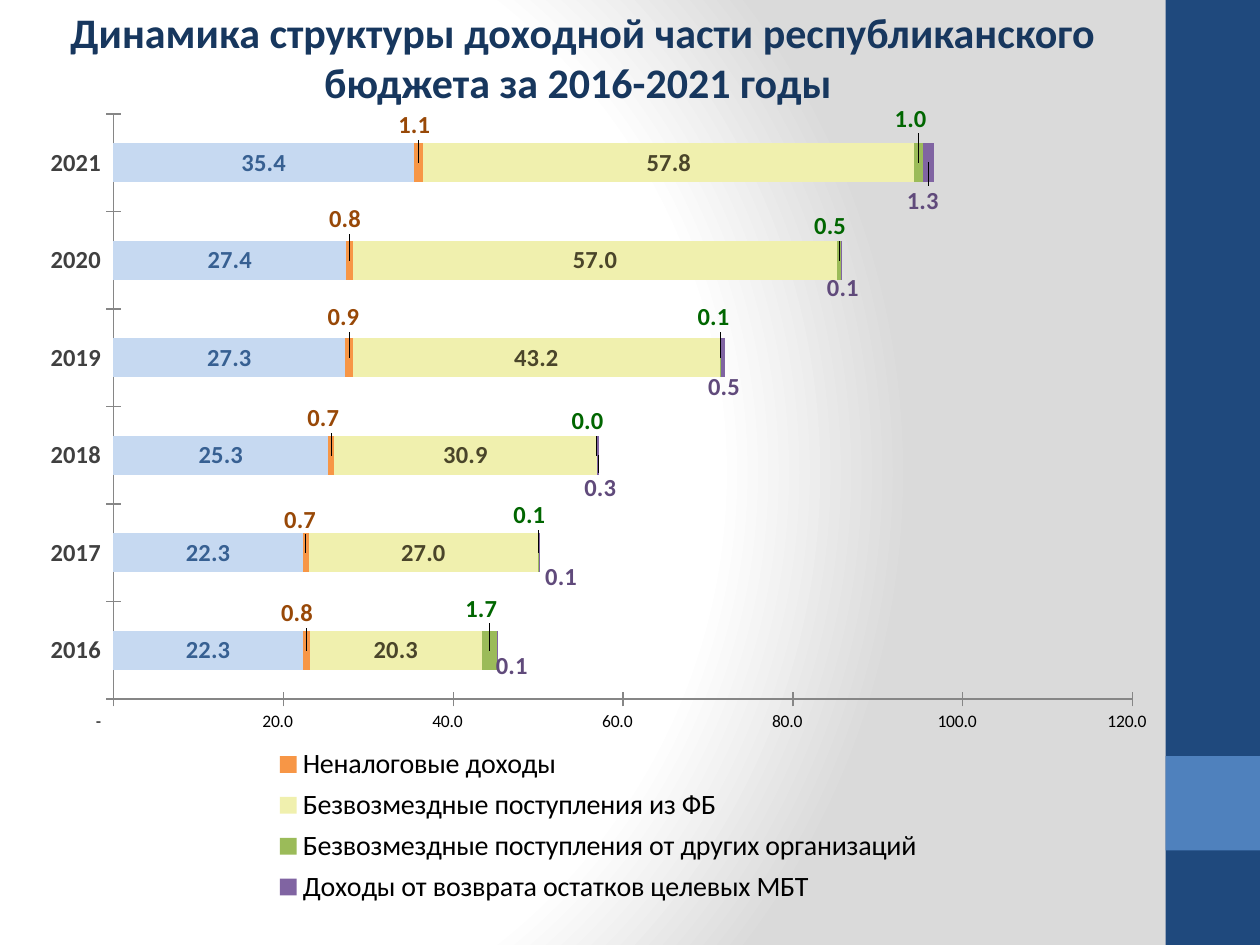
from dataclasses import dataclass

from lxml import etree
from pptx import Presentation
from pptx.chart.data import CategoryChartData
from pptx.dml.color import RGBColor
from pptx.enum.chart import XL_CHART_TYPE, XL_LEGEND_POSITION, XL_TICK_MARK
from pptx.enum.shapes import MSO_SHAPE
from pptx.enum.text import MSO_ANCHOR, MSO_AUTO_SIZE, PP_ALIGN
from pptx.oxml import parse_xml
from pptx.util import Inches, Pt

STACKED_BAR = XL_CHART_TYPE.BAR_STACKED
BOTTOM = XL_LEGEND_POSITION.BOTTOM
CROSS = XL_TICK_MARK.CROSS
NO_TICK = XL_TICK_MARK.NONE
RECTANGLE = MSO_SHAPE.RECTANGLE

C_NS = "http://schemas.openxmlformats.org/drawingml/2006/chart"
A_NS = "http://schemas.openxmlformats.org/drawingml/2006/main"
WIDTH, HEIGHT = Inches(10), Inches(7.5)
FONT = "Calibri"
COLORS = {
    "title": "17375E", "band": "1F497D", "accent": "4F81BD",
    "text": "000000", "year": "404040", "axis": "868686",
    "tax": "C6D9F1", "tax_label": "376092",
    "nontax": "F79646", "nontax_label": "984807",
    "federal": "F0F0AE", "federal_label": "4A452A",
    "other": "9BBB59", "other_label": "006600",
    "returns": "8064A2", "returns_label": "604A7B",
}
YEARS = [str(year) for year in range(2016, 2022)]


@dataclass(frozen=True)
class Box:
    """Place and size as shares of the slide."""
    left: float
    top: float
    width: float
    height: float

    def emu(self) -> tuple[int, int, int, int]:
        return (int(self.left * WIDTH), int(self.top * HEIGHT),
                int(self.width * WIDTH), int(self.height * HEIGHT))


@dataclass(frozen=True)
class Income:
    """One income source; shifts move its labels, in percent of the chart."""
    key: str
    name: str
    values: tuple[float, ...]
    shifts: tuple[tuple[float, float], ...] = ()


INCOMES = [
    Income("tax", "Налоговые доходы", (22.3, 22.3, 25.3, 27.3, 27.4, 35.4)),
    Income("nontax", "Неналоговые доходы", (0.8, 0.7, 0.7, 0.9, 0.8, 1.1),
           ((-0.8, -4.4), (-0.5, -3.9), (-0.7, -4.4),
            (-0.5, -4.8), (-0.4, -4.8), (-0.4, -4.4))),
    Income("federal", "Безвозмездные поступления из ФБ",
           (20.3, 27.0, 30.9, 43.2, 57.0, 57.8)),
    Income("other", "Безвозмездные поступления от других организаций",
           (1.7, 0.1, 0.0, 0.1, 0.5, 1.0),
           ((-0.7, -4.9), (-0.8, -4.4), (-0.8, -4.0),
            (-0.6, -4.8), (-0.8, -4.0), (-0.7, -5.2))),
    Income("returns", "Доходы от возврата остатков целевых МБТ",
           (0.1, 0.1, 0.3, 0.5, 0.1, 1.3),
           ((1.3, 1.9), (1.9, 2.9), (0.2, 3.8),
            (0.1, 3.4), (0.1, 3.3), (-0.5, 4.5))),
]


def rgb(key: str) -> RGBColor:
    return RGBColor.from_string(COLORS[key])


def style_font(font, size: float, color: str, bold: bool = False) -> None:
    font.name, font.size, font.bold = FONT, Pt(size), bold
    font.color.rgb = rgb(color)


def set_layout(parent, index: int, **settings) -> None:
    """Give a chart part a manual layout."""
    for old in parent.findall(f"{{{C_NS}}}layout"):
        parent.remove(old)
    layout = etree.Element(f"{{{C_NS}}}layout")
    manual = etree.SubElement(layout, f"{{{C_NS}}}manualLayout")
    for tag, value in settings.items():
        etree.SubElement(manual, f"{{{C_NS}}}{tag}", val=str(value))
    parent.insert(index, layout)


def paint_background(slide) -> None:
    fill = slide.background.fill
    fill.solid()
    solid = slide._element.find(f".//{{{A_NS}}}solidFill")
    stops = "".join(
        f'<a:gs pos="{share * 1000}"><a:srgbClr val="{color}"/></a:gs>'
        for share, color in ((0, "FFFFFF"), (75, "FFFFFF"), (100, "DADADA")))
    solid.getparent().replace(solid, parse_xml(
        f'<a:gradFill xmlns:a="{A_NS}" rotWithShape="1"><a:gsLst>{stops}</a:gsLst>'
        '<a:path path="circle"><a:fillToRect l="20000" t="50000" r="100000" '
        'b="50000"/></a:path></a:gradFill>'))


def add_band(slide, box: Box, color: str) -> None:
    band = slide.shapes.add_shape(RECTANGLE, *box.emu())
    band.shadow.inherit = False
    band.fill.solid()
    band.fill.fore_color.rgb = rgb(color)
    band.line.fill.background()


def set_title(slide, box: Box, text: str) -> None:
    title = slide.shapes.title
    title.left, title.top, title.width, title.height = box.emu()
    frame = title.text_frame
    frame.word_wrap = True
    frame.auto_size = MSO_AUTO_SIZE.NONE
    frame.vertical_anchor = MSO_ANCHOR.TOP
    paragraph = frame.paragraphs[0]
    paragraph.alignment = PP_ALIGN.CENTER
    run = paragraph.add_run()
    run.text = text
    style_font(run.font, 24, "title", bold=True)


def style_series(series, income: Income) -> None:
    series.format.fill.solid()
    series.format.fill.fore_color.rgb = rgb(income.key)
    series.invert_if_negative = False
    label_color = f"{income.key}_label"
    labels = series.data_labels
    labels.show_value = True
    style_font(labels.font, 14, label_color, bold=True)
    for point in range(len(income.shifts)):
        style_font(series.points[point].data_label.font, 14, label_color, bold=True)
    point_labels = series._element.iter(f"{{{C_NS}}}dLbl")
    for label, (right, down) in zip(point_labels, income.shifts):
        set_layout(label, 1, x=round(right / 100, 4), y=round(down / 100, 4))


def style_axes(chart) -> None:
    for axis in (chart.category_axis, chart.value_axis):
        axis.has_major_gridlines = False
        axis.major_tick_mark, axis.minor_tick_mark = CROSS, NO_TICK
        axis.format.line.color.rgb = rgb("axis")
    style_font(chart.category_axis.tick_labels.font, 14, "year", bold=True)
    scale = chart.value_axis
    scale.minimum_scale, scale.maximum_scale, scale.major_unit = 0, 120, 20
    style_font(scale.tick_labels.font, 10, "text")
    scale.tick_labels.number_format = (
        '_-* #,##0.0\\ _₽_-;\\-* #,##0.0\\ _₽_-;_-* "-"??\\ _₽_-;_-@_-')
    scale.tick_labels.number_format_is_linked = False


def add_income_chart(slide, box: Box) -> None:
    data = CategoryChartData(number_format="0.0")
    data.categories = YEARS
    for income in INCOMES:
        data.add_series(income.name, income.values)
    chart = slide.shapes.add_chart(STACKED_BAR, *box.emu(), data).chart
    style_font(chart.font, 10, "text")
    chart.has_title = False
    plot = chart.plots[0]
    plot.gap_width, plot.overlap, plot.vary_by_categories = 150, 100, False
    for series, income in zip(plot.series, INCOMES):
        style_series(series, income)
    style_axes(chart)
    plot_area = chart._chartSpace.find(f".//{{{C_NS}}}plotArea")
    set_layout(plot_area, 0, layoutTarget="inner", xMode="edge", yMode="edge",
               x=0.077, y=0.023, w=0.889, h=0.688)

    # Legend lists every income but the last
    chart.has_legend = True
    legend = chart.legend
    legend.position = BOTTOM
    legend.include_in_layout = False
    style_font(legend.font, 16, "text")
    set_layout(legend._element, 1, xMode="edge", yMode="edge",
               x=0.2, y=0.76, w=0.6, h=0.2)
    legend._element.insert(1, parse_xml(
        f'<c:legendEntry xmlns:c="{C_NS}"><c:idx val="{len(INCOMES) - 1}"/>'
        '<c:delete val="1"/></c:legendEntry>'))


def main() -> None:
    deck = Presentation()
    deck.slide_width, deck.slide_height = WIDTH, HEIGHT
    slide = deck.slides.add_slide(deck.slide_layouts[5])
    paint_background(slide)

    # Side band with its lighter square
    add_band(slide, Box(0.925, 0, 0.075, 1), "band")
    add_band(slide, Box(0.925, 0.8, 0.075, 0.1), "accent")

    # Title and chart
    set_title(slide, Box(0, 0, 0.925, 0.12),
              "Динамика структуры доходной части республиканского "
              "бюджета за 2016-2021 годы ")
    add_income_chart(slide, Box(0.02, 0.1, 0.91, 0.9))
    deck.save("out.pptx")


if __name__ == "__main__":
    main()
